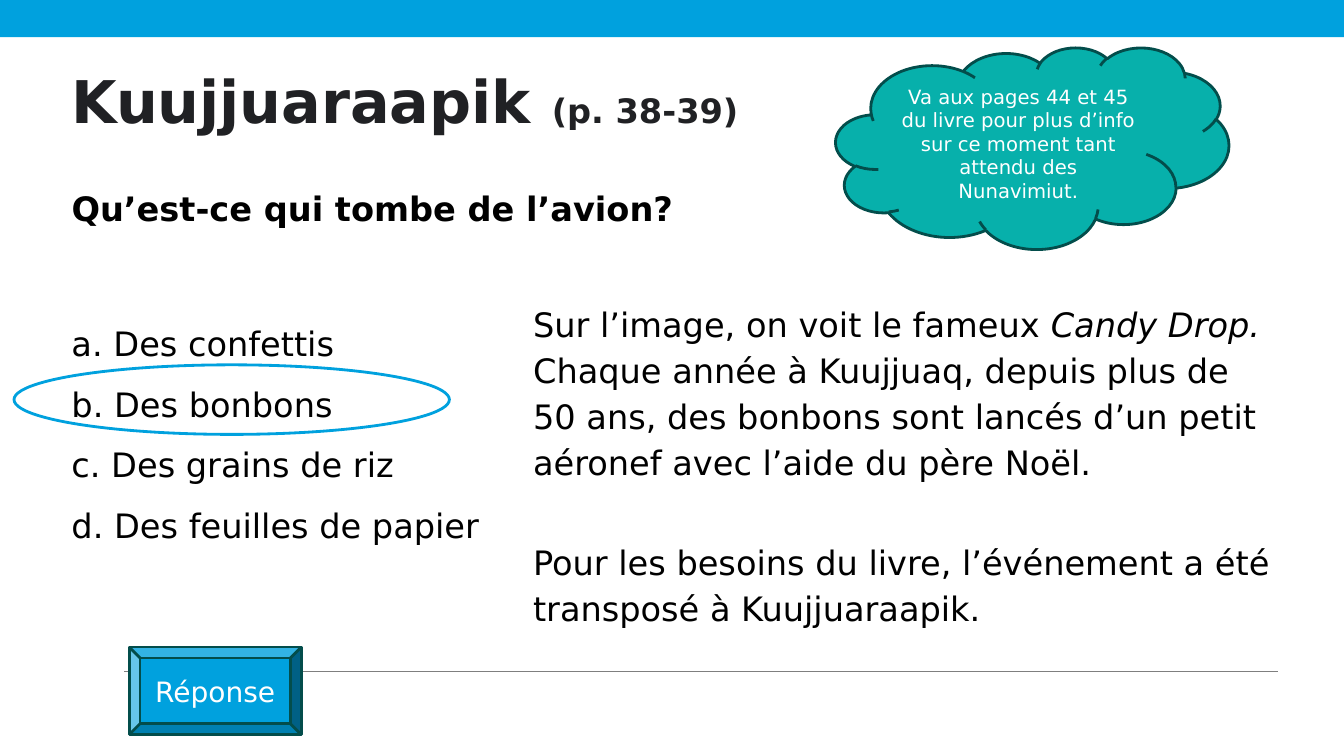
from dataclasses import dataclass

import pptx
import pptx.dml.color
import pptx.enum.shapes
import pptx.enum.text
import pptx.oxml.ns
import pptx.slide
import pptx.text.text
import pptx.util
from lxml import etree

Pt = pptx.util.Pt
Preset = pptx.enum.shapes.MSO_SHAPE
Anchor = pptx.enum.text.MSO_ANCHOR
Align = pptx.enum.text.PP_ALIGN

FONT = "DejaVu Sans"
COLOURS = {
    "blue": "00A1DE",
    "teal": "07B0AB",
    "outline": "034D4B",
    "rule": "7F7F7F",
    "title": "202124",
    "black": "000000",
    "white": "FFFFFF",
}


@dataclass
class Span:
    text: str
    size: float = 24
    colour: str = "black"
    bold: bool = False
    italic: bool = False


@dataclass
class Para:
    spans: list[Span]
    spacing: float = 1.0
    before: float = 0
    align: Align = Align.LEFT


@dataclass
class TextBox:
    area: tuple[float, float, float, float]
    paras: list[Para]
    anchor: Anchor = Anchor.TOP


@dataclass
class Figure:
    preset: Preset
    area: tuple[float, float, float, float]
    fill: str = ""
    line: str = ""
    label: Span | None = None


def colour(name: str) -> pptx.dml.color.RGBColor:
    return pptx.dml.color.RGBColor.from_string(COLOURS[name])


def write(frame: pptx.text.text.TextFrame, paras: list[Para], anchor: Anchor) -> None:
    frame.word_wrap = True
    frame.vertical_anchor = anchor
    for index, item in enumerate(paras):
        para = frame.add_paragraph() if index else frame.paragraphs[0]
        para.alignment = item.align
        para.line_spacing = item.spacing
        para.space_before = Pt(item.before)
        for span in item.spans:
            for number, piece in enumerate(span.text.split("\n")):
                if number:
                    para.add_line_break()
                run = para.add_run()
                run.text = piece
                run.font.name = FONT
                run.font.size = Pt(span.size)
                run.font.bold = span.bold
                run.font.italic = span.italic
                run.font.color.rgb = colour(span.colour)


def draw_text(page: pptx.slide.Slide, item: TextBox) -> None:
    box = page.shapes.add_textbox(*map(Pt, item.area))
    write(box.text_frame, item.paras, item.anchor)


def draw_figure(page: pptx.slide.Slide, item: Figure) -> None:
    shape = page.shapes.add_shape(item.preset, *map(Pt, item.area))
    shape.shadow.inherit = False
    if item.fill:
        shape.fill.solid()
        shape.fill.fore_color.rgb = colour(item.fill)
    else:
        shape.fill.background()
    if item.line:
        shape.line.color.rgb = colour(item.line)
        shape.line.width = Pt(2)
    else:
        shape.line.fill.background()
    if item.label:
        write(shape.text_frame, [Para([item.label], align=Align.CENTER)], Anchor.MIDDLE)


def draw_rule(page: pptx.slide.Slide, left: float, right: float, y: float) -> None:
    rule = page.shapes.add_connector(
        pptx.enum.shapes.MSO_CONNECTOR.STRAIGHT, Pt(left), Pt(y), Pt(right), Pt(y))
    rule.line.color.rgb = colour("rule")
    rule.line.width = Pt(0.75)
    etree.SubElement(rule._element.spPr, pptx.oxml.ns.qn("a:effectLst"))


ANSWERS = ["a. Des confettis", "b. Des bonbons", "c. Des grains de riz",
           "d. Des feuilles de papier"]

TEXTS = [
    # Title
    TextBox((44, 26.6, 866, 73.4), [Para([
        Span("Kuujjuaraapik ", 42, "title", bold=True),
        Span("(p. 38-39)", 24, "title", bold=True)])], Anchor.BOTTOM),
    # Question
    TextBox((44, 131, 866, 132.5),
            [Para([Span("Qu’est-ce qui tombe de l’avion?", bold=True)])]),
    # Explanation
    TextBox((373.7, 209.5, 586, 307.5), [
        Para([Span("Sur l’image, on voit le fameux "),
              Span("Candy Drop. ", italic=True),
              Span("Chaque année à Kuujjuaq, depuis plus de\n50 ans, des bonbons sont "
                   "lancés d’un petit aéronef avec l’aide du père Noël.")], 1.14),
        Para([Span("Pour les besoins du livre, l’événement a été transposé à "
                   "Kuujjuaraapik.")], 1.14, before=39)]),
    # Answers
    TextBox((44, 213, 396, 175.7), [Para([Span(answer)], 1.5) for answer in ANSWERS]),
]

FIGURES = [
    # Hint cloud
    Figure(Preset.CLOUD, (597, 33.8, 280.8, 144), "teal", "outline",
           Span("Va aux pages 44 et 45 du livre pour plus d’info sur ce moment tant "
                "attendu des Nunavimiut.", 14, "white")),
    # Answer button
    Figure(Preset.BEVEL, (92.2, 462.2, 123, 62.6), "blue", "outline",
           Span("Réponse", 20, "white")),
    # Ring around the right answer
    Figure(Preset.OVAL, (10, 260.6, 311, 49.7), line="blue"),
]


def main() -> None:
    deck = pptx.Presentation()
    deck.slide_width, deck.slide_height = Pt(960), Pt(540)
    page = deck.slides.add_slide(deck.slide_layouts[6])

    # Top band and bottom rule
    draw_figure(page, Figure(Preset.RECTANGLE, (0, 0, 960, 26.6), "blue"))
    draw_rule(page, 88.6, 913, 479.5)

    for text in TEXTS:
        draw_text(page, text)
    for figure in FIGURES:
        draw_figure(page, figure)
    deck.save("out.pptx")


if __name__ == "__main__":
    main()
